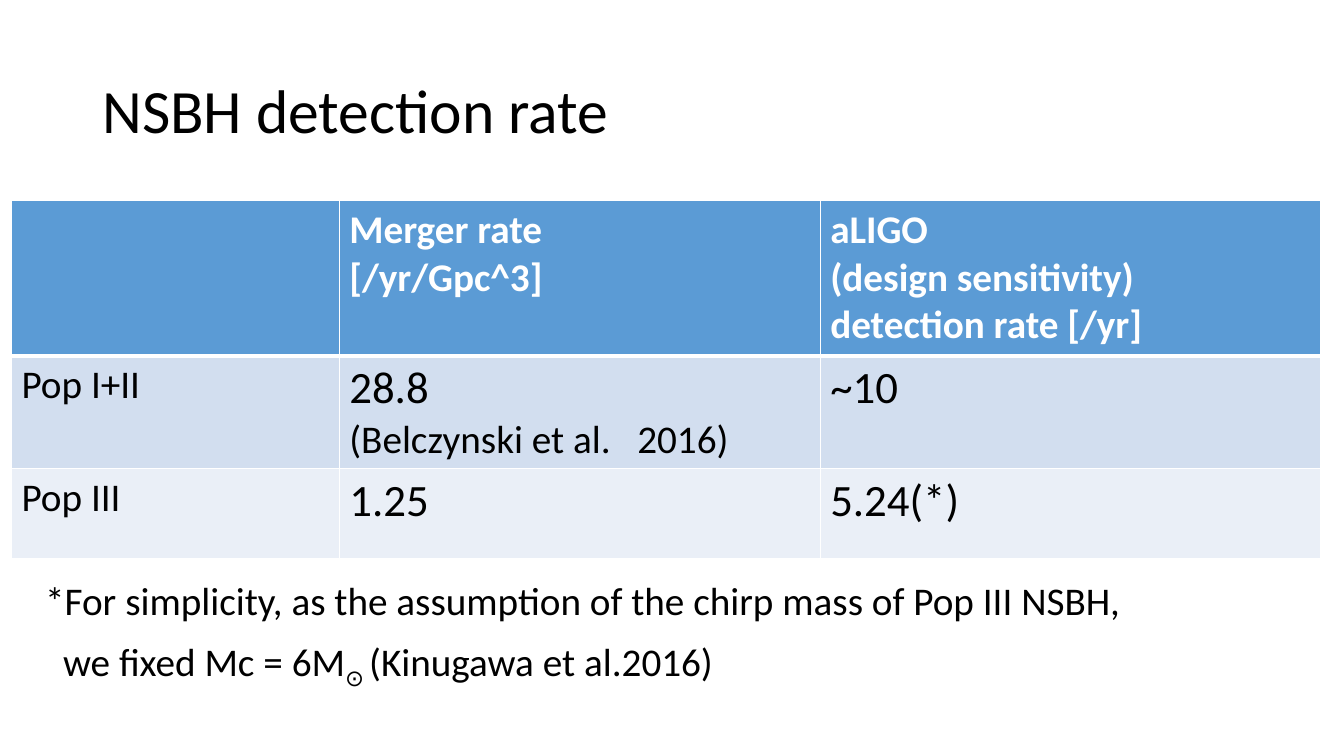
from lxml.etree import SubElement
from pptx import Presentation
from pptx.dml.color import RGBColor
from pptx.enum.text import MSO_ANCHOR, PP_ALIGN
from pptx.oxml.ns import qn
from pptx.util import Cm, Pt

FONT = "Calibri"
BLACK, WHITE = "000000", "FFFFFF"
HEADER_FILL, ROW_FILLS = "5B9BD5", ["D2DEEF", "EAEFF7"]
COLUMNS = [8.26, 12.12, 12.62]
ROWS = [3.91, 2.79, 2.26]
HEADER = [[], ["Merger rate", "[/yr/Gpc^3]"],
          ["aLIGO", "(design sensitivity)", "detection rate [/yr]"]]
BODY = [
    ["Pop I+II", "28.8", "~10"],
    ["Pop III", "1.25", "5.24(*)"],
]


def rgb(value):
    return RGBColor.from_string(value)


def add_text(p, text, size=28, color=BLACK, bold=False, baseline=0, tracking=0):
    r = p.add_run()
    r.text = text
    f = r.font
    f.name, f.size, f.bold = FONT, Pt(size), bold
    f.color.rgb = rgb(color)
    if baseline:
        f._element.set("baseline", str(baseline * 1000))
    if tracking:
        f._element.set("spc", str(round(tracking * 100)))


def set_border(cell, side, width):
    ln = SubElement(cell._tc.get_or_add_tcPr(), qn(f"a:ln{side}"), w=str(Pt(width)))
    fill = SubElement(ln, qn("a:solidFill"))
    SubElement(fill, qn("a:srgbClr"), val=WHITE)


def format_cell(cell, color, bottom=1, top=1):
    for side, width in zip("LRTB", (1, 1, top, bottom)):
        set_border(cell, side, width)
    cell.fill.solid()
    cell.fill.fore_color.rgb = rgb(color)


def place(shape, box):
    shape.left, shape.top, shape.width, shape.height = map(Cm, box)


def build_title(s, box):
    title = s.shapes.title
    place(title, box)
    tf = title.text_frame
    tf.vertical_anchor = MSO_ANCHOR.MIDDLE
    p = tf.paragraphs[0]
    p.alignment = PP_ALIGN.LEFT
    p.line_spacing = 0.9
    add_text(p, "NSBH detection rate", size=44)


def build_rates(s, box):
    table = s.shapes.add_table(len(ROWS), len(COLUMNS), *map(Cm, box)).table
    for column, width in zip(table.columns, COLUMNS):
        column.width = Cm(width)
    for row, height in zip(table.rows, ROWS):
        row.height = Cm(height)

    for j, lines in enumerate(HEADER):
        cell = table.cell(0, j)
        format_cell(cell, HEADER_FILL, bottom=3)
        tf = cell.text_frame
        for i, line in enumerate(lines):
            p = tf.add_paragraph() if i else tf.paragraphs[0]
            add_text(p, line, color=WHITE, bold=True)

    for i, (values, color) in enumerate(zip(BODY, ROW_FILLS), start=1):
        for j, value in enumerate(values):
            cell = table.cell(i, j)
            format_cell(cell, color, top=3 if i == 1 else 1)
            add_text(cell.text_frame.paragraphs[0], value, size=32 if j else 28)

    p = table.cell(1, 1).text_frame.add_paragraph()
    add_text(p, "(Belczynski et al.")
    add_text(p, " ", tracking=12.7)
    add_text(p, "2016)")


def build_footnote(s, box):
    tf = s.shapes.add_textbox(*map(Cm, box)).text_frame
    tf.word_wrap = True
    first, second = tf.paragraphs[0], tf.add_paragraph()
    for p in (first, second):
        p.line_spacing = 0.9
        p.space_before = Pt(10)
    add_text(first, "*For simplicity, as the assumption of the chirp mass of Pop III NSBH,")
    second._p.get_or_add_pPr().set("marL", str(Cm(0.45)))
    add_text(second, "we fixed Mc = 6M")
    add_text(second, "⊙ ", baseline=-25)
    add_text(second, "(Kinugawa et al.2016)")


def main():
    prs = Presentation()
    prs.slide_width, prs.slide_height = Cm(33.87), Cm(19.05)
    s = prs.slides.add_slide(prs.slide_layouts[5])
    build_title(s, (2.33, 1.01, 29.21, 3.68))
    build_rates(s, (0.29, 5.06, sum(COLUMNS), sum(ROWS)))
    build_footnote(s, (0.89, 14.53, 32.5, 3.5))
    prs.save("out.pptx")


if __name__ == "__main__":
    main()
